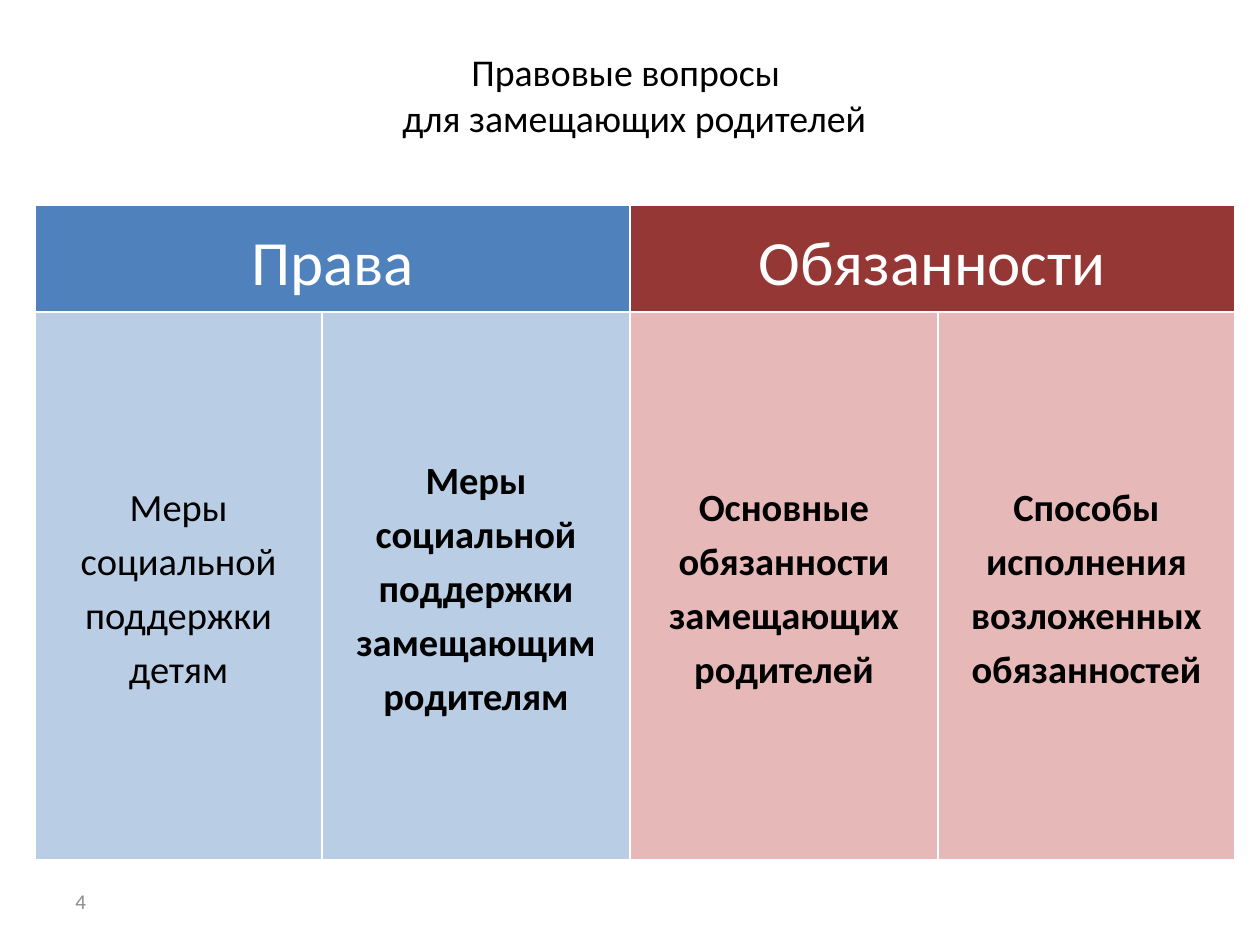
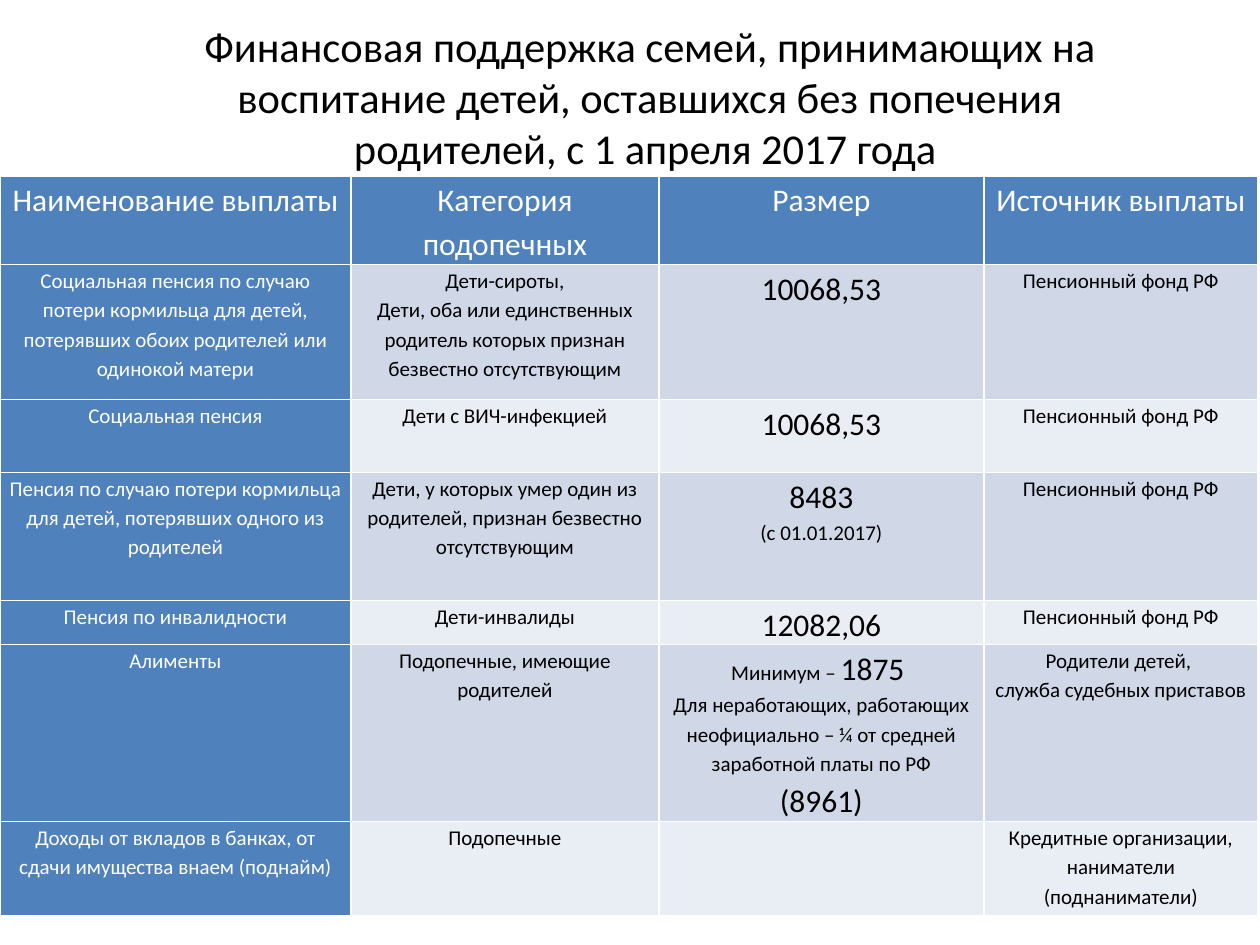
from pptx import Presentation
from pptx.dml.color import RGBColor
from pptx.enum.text import MSO_ANCHOR, MSO_AUTO_SIZE, PP_ALIGN
from pptx.util import Emu, Pt

FONT = "Calibri"
BLACK, WHITE, GREY = "000000", "FFFFFF", "8C8C8C"
BLUE, LIGHT_BLUE = "4F81BD", "B9CDE5"
RED, LIGHT_RED = "953735", "E6B9B8"
BANDS = ["D0D8E8", "E9EDF4"]
TITLE_ONLY = 5
SMALL, LARGE = 12, 18
FUND = "Пенсионный фонд РФ"

HEADINGS = ["Наименование выплаты", "Категория подопечных", "Размер", "Источник выплаты"]
PAYMENTS = [
    ("Социальная пенсия по случаю потери кормильца для детей, "
     "потерявших обоих родителей или одинокой матери",
     "Дети-сироты,\nДети, оба или единственных родитель которых признан "
     "безвестно отсутствующим",
     [[("10068,53", LARGE)]], FUND),
    ("Социальная пенсия", "Дети с ВИЧ-инфекцией", [[("10068,53", LARGE)]], FUND),
    ("Пенсия по случаю потери кормильца для детей, потерявших одного из родителей",
     "Дети, у которых умер один из родителей, признан безвестно отсутствующим",
     [[("8483", LARGE)], [("(с 01.01.2017)", SMALL)]], FUND),
    ("Пенсия по инвалидности", "Дети-инвалиды", [[("12082,06", LARGE)]], FUND),
    ("Алименты", "Подопечные, имеющие родителей",
     [[("Минимум – ", SMALL), ("1875 ", LARGE)],
      [("Для неработающих, работающих неофициально – ¼ от средней "
        "заработной платы по РФ ", SMALL), ("(8961)", LARGE)]],
     "Родители детей, \nслужба судебных приставов"),
    ("Доходы от вкладов в банках, от сдачи имущества внаем (поднайм)",
     "Подопечные", [],
     "Кредитные организации, наниматели (поднаниматели)"),
]


def px(length):
    return Emu(round(length * 914400 / 126))


def color(value):
    return RGBColor.from_string(value)


def format_span(span, size, ink, bold=False):
    span.font.name = FONT
    span.font.size = Pt(size)
    span.font.bold = bold
    span.font.color.rgb = color(ink)


def plain(text, size):
    return [[(line, size)] for line in text.split("\n")]


def place(shape, box):
    shape.left, shape.top, shape.width, shape.height = map(px, box)


def add_title(page, box, text, size, anchor, top=6, bottom=6):
    title = page.shapes.title
    place(title, box)
    frame = title.text_frame
    frame.text = text
    frame.auto_size = MSO_AUTO_SIZE.NONE
    frame.vertical_anchor = anchor
    frame.margin_top, frame.margin_bottom = px(top), px(bottom)
    for para in frame.paragraphs:
        para.alignment = PP_ALIGN.CENTER
        for span in para.runs:
            format_span(span, size, BLACK)


def add_page_number(page, box, number):
    frame = page.shapes.add_textbox(*map(px, box)).text_frame
    frame.word_wrap = True
    frame.vertical_anchor = MSO_ANCHOR.MIDDLE
    frame.text = number
    format_span(frame.paragraphs[0].runs[0], SMALL, GREY)


def add_grid(page, left, top, widths, heights):
    frame = page.shapes.add_table(len(heights), len(widths), px(left), px(top),
                                  px(sum(widths)), px(sum(heights)))
    table = frame.table
    for column, width in zip(table.columns, widths):
        column.width = px(width)
    for row, height in zip(table.rows, heights):
        row.height = px(height)
    return table


def fill_cell(cell, paragraphs, fill, ink, bold=False, anchor=MSO_ANCHOR.TOP):
    cell.fill.solid()
    cell.fill.fore_color.rgb = color(fill)
    cell.margin_left = cell.margin_right = px(9)
    cell.margin_top = cell.margin_bottom = 0
    cell.vertical_anchor = anchor
    frame = cell.text_frame
    for index, spans in enumerate(paragraphs):
        para = frame.add_paragraph() if index else frame.paragraphs[0]
        para.alignment = PP_ALIGN.CENTER
        para.line_spacing = 1.15
        for text, size in spans:
            span = para.add_run()
            span.text = text
            format_span(span, size, ink, bold)


def build_legal_page(deck):
    page = deck.slides.add_slide(deck.slide_layouts[TITLE_ONLY])
    add_title(page, (63, 38, 1134, 157),
              "Правовые вопросы \n для замещающих родителей",
              21.6, MSO_ANCHOR.MIDDLE, bottom=50)
    add_page_number(page, (63, 876, 294, 50), "4")
    table = add_grid(page, 35, 205, [287, 308, 308, 297], [107, 548])
    groups = [
        ("Права", BLUE, LIGHT_BLUE,
         ["Меры социальной поддержки детям",
          "Меры социальной поддержки замещающим родителям"]),
        ("Обязанности", RED, LIGHT_RED,
         ["Основные обязанности замещающих родителей",
          "Способы исполнения возложенных обязанностей"]),
    ]
    for group, (heading, dark, light, topics) in enumerate(groups):
        first = 2 * group
        table.cell(0, first).merge(table.cell(0, first + 1))
        fill_cell(table.cell(0, first), plain(heading, 36), dark, WHITE,
                  anchor=MSO_ANCHOR.MIDDLE)
        for column, topic in enumerate(topics, first):
            fill_cell(table.cell(1, column), plain(topic, 22), light, BLACK,
                      bold=column > 0, anchor=MSO_ANCHOR.MIDDLE)


def build_payments_page(deck):
    page = deck.slides.add_slide(deck.slide_layouts[TITLE_ONLY])
    add_title(page, (144, 0, 1012, 155),
              "Финансовая поддержка семей, принимающих на воспитание детей, "
              "оставшихся без попечения родителей, с 1 апреля 2017 года ",
              24.3, MSO_ANCHOR.TOP, top=20, bottom=0)
    table = add_grid(page, 0, 176, [351, 308, 325, 274],
                     [87, 135, 73, 128, 44, 177, 94])
    table.first_col = True
    for column, heading in enumerate(HEADINGS):
        fill_cell(table.cell(0, column), plain(heading, LARGE), BLUE, WHITE)
    for row, (payment, children, amount, payer) in enumerate(PAYMENTS, 1):
        band = BANDS[(row - 1) % 2]
        fill_cell(table.cell(row, 0), plain(payment, SMALL), BLUE, WHITE)
        contents = [plain(children, SMALL), amount, plain(payer, SMALL)]
        for column, paragraphs in enumerate(contents, 1):
            fill_cell(table.cell(row, column), paragraphs, band, BLACK)


def main():
    deck = Presentation()
    deck.slide_width, deck.slide_height = px(1260), px(945)
    build_legal_page(deck)
    build_payments_page(deck)
    deck.save("out.pptx")


if __name__ == "__main__":
    main()
